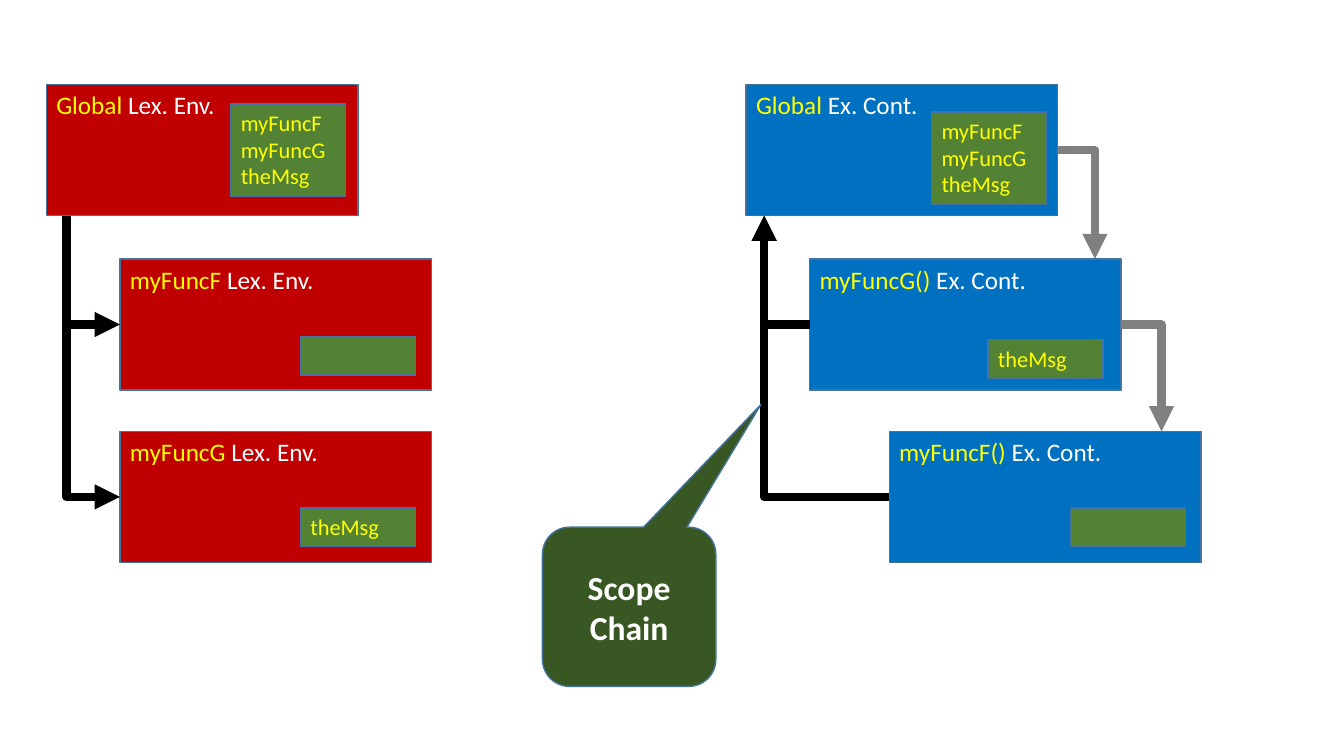
from lxml.etree import SubElement
from pptx import Presentation
from pptx.dml.color import RGBColor
from pptx.enum.shapes import MSO_CONNECTOR as Connector, MSO_SHAPE as Shape
from pptx.enum.text import MSO_ANCHOR as Anchor, PP_ALIGN as Align
from pptx.oxml.ns import qn
from pptx.util import Inches, Pt

RED = RGBColor(0xC0, 0x00, 0x00)
BLUE = RGBColor(0x00, 0x70, 0xC0)
GREEN = RGBColor(0x54, 0x82, 0x35)
DARK_GREEN = RGBColor(0x38, 0x57, 0x23)
OUTLINE = RGBColor(0x43, 0x73, 0x9E)
YELLOW = RGBColor(0xFF, 0xFF, 0x00)
WHITE = RGBColor(0xFF, 0xFF, 0xFF)
BLACK = RGBColor(0x00, 0x00, 0x00)
GRAY = RGBColor(0x80, 0x80, 0x80)

# Grid, in inches
ROWS = (0.84, 2.57, 4.28)
LEX_COLUMNS = (0.46, 1.19, 1.19)
CONTEXT_COLUMNS = (7.4, 8.03, 8.82)
BOX_WIDTH, BOX_HEIGHT = 3.09, 1.3
VARIABLES_WIDTH = 1.14
GLOBAL_BOTTOM = ROWS[0] + BOX_HEIGHT
LEX_TRUNK, SCOPE_TRUNK = 0.66, 7.58
LEFT, RIGHT = 1, 3  # connection sites of a rectangle

# Owner, rest of the title, variables, offset of the variables in the box
LEX_ENVS = (
    ("Global", " Lex. Env.", ("myFuncF", "myFuncG", "theMsg"), (1.83, 0.19)),
    ("myFuncF ", "Lex. Env.", (), (1.79, 0.77)),
    ("myFuncG ", "Lex. Env.", ("theMsg",), (1.79, 0.76)),
)
CONTEXTS = (
    ("Global", " Ex. Cont.", ("myFuncF", "myFuncG", "theMsg"), (1.84, 0.27)),
    ("myFuncG()", " Ex. Cont.", ("theMsg",), (1.77, 0.8)),
    ("myFuncF()", " Ex. Cont.", (), (1.8, 0.76)),
)


def add_block(page, kind, place, fill, anchor=Anchor.TOP):
    block = page.shapes.add_shape(kind, *(Inches(length) for length in place))
    block.shadow.inherit = False
    block.fill.solid()
    block.fill.fore_color.rgb = fill
    block.line.color.rgb = OUTLINE
    block.line.width = Pt(1)
    block.text_frame.word_wrap = True
    block.text_frame.vertical_anchor = anchor
    return block


def format_span(span, size, color, bold=False):
    span.font.name = "Calibri"
    span.font.size = Pt(size)
    span.font.color.rgb = color
    span.font.bold = bold


def write_lines(block, lines, align, size, color, bold=False):
    block.text_frame.text = "\n".join(lines)
    for para in block.text_frame.paragraphs:
        para.alignment = align
        for span in para.runs:
            format_span(span, size, color, bold)


def add_scope_box(page, left, top, fill, scope):
    """A titled box with the list of its variables inside."""
    owner, kind, variables, (shift_x, shift_y) = scope
    box = add_block(page, Shape.RECTANGLE, (left, top, BOX_WIDTH, BOX_HEIGHT), fill)
    para = box.text_frame.paragraphs[0]
    para.alignment = Align.LEFT
    for words, color in ((owner, YELLOW), (kind, WHITE)):
        span = para.add_run()
        span.text = words
        format_span(span, 18, color)

    height = 0.92 if len(variables) > 1 else 0.38
    place = (left + shift_x, top + shift_y, VARIABLES_WIDTH, height)
    listing = add_block(page, Shape.RECTANGLE, place, GREEN)
    if variables:
        write_lines(listing, variables, Align.LEFT, 16, YELLOW)
    return box


def add_elbow(page, box, side, end_x, end_y, color, arrow):
    """Leave the box sideways, then turn once; arrow is headEnd or tailEnd."""
    start_x = box.left + (box.width if side == RIGHT else 0)
    start_y = box.top + box.height // 2
    elbow = page.shapes.add_connector(
        Connector.ELBOW, start_x, start_y, Inches(end_x), Inches(end_y))
    elbow.begin_connect(box, side)
    elbow.line.color.rgb = color
    elbow.line.width = Pt(6)
    properties = elbow._element.spPr
    properties.find(qn("a:prstGeom")).set("prst", "bentConnector2")
    SubElement(properties.find(qn("a:ln")), qn("a:" + arrow), type="triangle")
    SubElement(properties, qn("a:effectLst"))


def add_callout(page):
    callout = add_block(page, Shape.ROUNDED_RECTANGULAR_CALLOUT,
                        (5.38, 5.23, 1.72, 1.58), DARK_GREEN, Anchor.MIDDLE)
    for index, value in enumerate((0.76, -1.27, 0.17)):
        callout.adjustments[index] = value
    write_lines(callout, ("Scope", "Chain"), Align.CENTER, 24, WHITE, bold=True)


def main():
    deck = Presentation()
    deck.slide_width, deck.slide_height = Inches(13.33), Inches(7.5)
    page = deck.slides.add_slide(deck.slide_layouts[6])

    # Lexical environments and execution contexts
    envs = [add_scope_box(page, left, top, RED, scope)
            for left, top, scope in zip(LEX_COLUMNS, ROWS, LEX_ENVS)]
    contexts = [add_scope_box(page, left, top, BLUE, scope)
                for left, top, scope in zip(CONTEXT_COLUMNS, ROWS, CONTEXTS)]

    # Nested environments, and the scope chain back to the global context
    for env in envs[1:]:
        add_elbow(page, env, LEFT, LEX_TRUNK, GLOBAL_BOTTOM, BLACK, "headEnd")
    for context in contexts[1:]:
        add_elbow(page, context, LEFT, SCOPE_TRUNK, GLOBAL_BOTTOM, BLACK, "tailEnd")
    add_callout(page)

    # Calls from one context to the next
    for caller, end_x, end_y in zip(contexts, (10.86, 11.52), ROWS[1:]):
        add_elbow(page, caller, RIGHT, end_x, end_y, GRAY, "tailEnd")

    deck.save("out.pptx")


if __name__ == "__main__":
    main()
